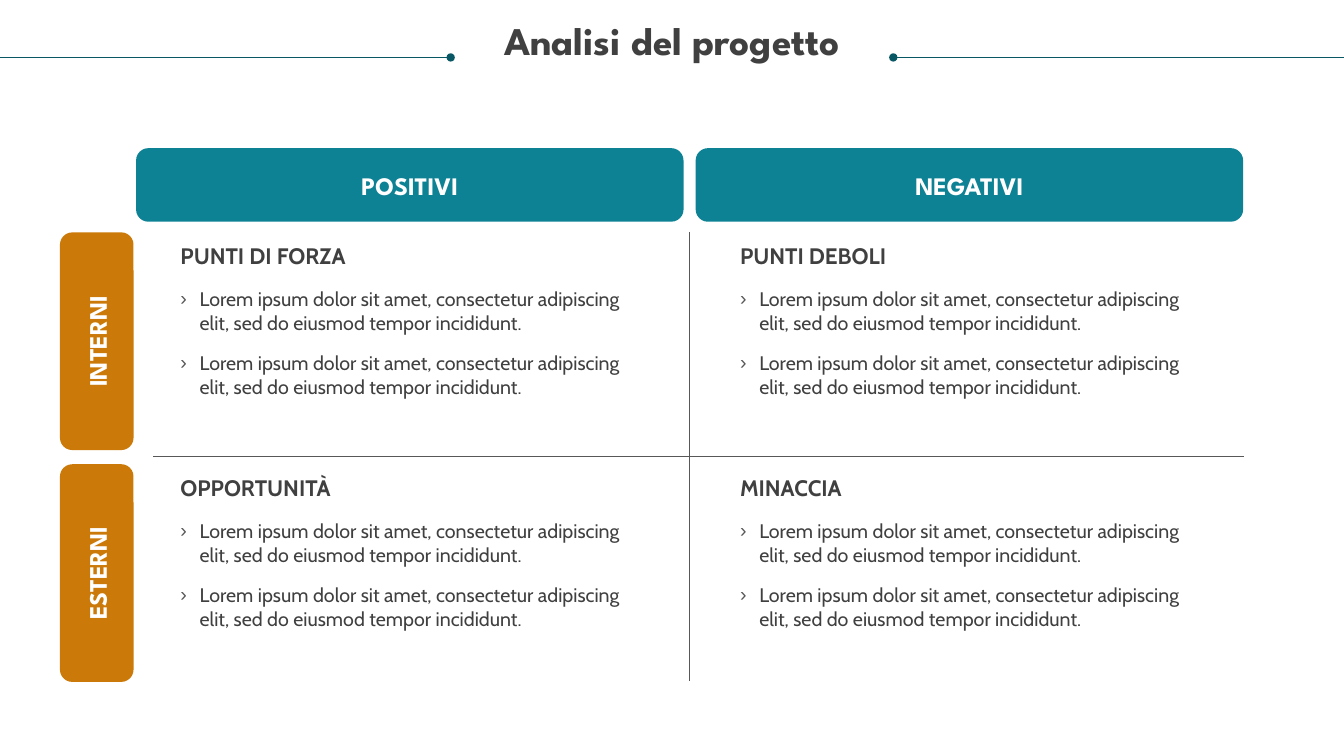
from dataclasses import dataclass

from lxml.etree import SubElement
from pptx import Presentation
from pptx.dml.color import RGBColor
from pptx.enum.shapes import MSO_CONNECTOR as Link, MSO_SHAPE as Kind
from pptx.enum.text import MSO_ANCHOR as Anchor, MSO_AUTO_SIZE as Fit, PP_ALIGN as Align
from pptx.oxml.ns import qn
from pptx.util import Emu, Pt

SCALE = 9144  # EMU in one px, 100 px to the inch
HEAD, BODY = "League Spartan", "Cabin"
WHITE, INK, GREY = "FFFFFF", "404040", "585858"
TEAL, DARK, AMBER = "0D8295", "085764", "CB7A09"
COL, ROW = 555, 230  # steps of the two-by-two grid
LOREM = "Lorem ipsum dolor sit amet, consectetur adipiscing elit, sed do eiusmod tempor incididunt."


@dataclass
class Box:
    x: int
    y: int
    w: int
    h: int


@dataclass
class Label:
    text: str
    box: Box
    fill: str
    turn: int = 0


@dataclass
class Rule:
    x1: int
    y1: int
    x2: int
    y2: int
    color: str = GREY
    dot: bool = False


@dataclass
class Cell:
    title: str
    col: int
    row: int


LABELS = [
    Label("POSITIVI", Box(135, 147, 543, 73), TEAL),
    Label("NEGATIVI", Box(135 + COL, 147, 543, 73), TEAL),
    Label("INTERNI", Box(-12, 302, 216, 73), AMBER, 270),
    Label("ESTERNI", Box(-12, 302 + ROW, 216, 73), AMBER, 270),
]
RULES = [
    Rule(447, 57, 0, 57, DARK, True),
    Rule(886, 57, 1333, 57, DARK, True),
    Rule(152, 453, 1234, 453),
    Rule(684, 230, 684, 676),
]
CELLS = [
    Cell("PUNTI DI FORZA", 0, 0),
    Cell("PUNTI DEBOLI", 1, 0),
    Cell("OPPORTUNITÀ", 0, 1),
    Cell("MINACCIA", 1, 1),
]


def px(n: int) -> Emu:
    return Emu(n * SCALE)


def rgb(color: str) -> RGBColor:
    return RGBColor.from_string(color)


def place(shape, box: Box) -> None:
    shape.left, shape.top = px(box.x), px(box.y)
    shape.width, shape.height = px(box.w), px(box.h)


def put(shape, *lines: str, size: int, font: str = BODY, color: str = INK,
        bold: bool = False, align=Align.LEFT, anchor=Anchor.TOP,
        inset: int = 0, lead: float = 1.0, gap: int = 0, mark: str = "") -> None:
    """Fill a shape with one paragraph per line, bulleted when mark is given."""
    frame = shape.text_frame
    frame.word_wrap, frame.auto_size = True, Fit.NONE
    frame.vertical_anchor = anchor
    frame.margin_left = frame.margin_right = px(inset)
    frame.margin_top = frame.margin_bottom = px(inset // 2)
    frame.text = "\n".join(lines)
    for para in frame.paragraphs:
        para.alignment, para.line_spacing, para.space_before = align, lead, Pt(gap)
        for run in para.runs:
            run.font.name, run.font.size, run.font.bold = font, Pt(size), bold
            run.font.color.rgb = rgb(color)
        if mark:
            bullet(para, mark)


def bullet(para, mark: str) -> None:
    props = para._p.get_or_add_pPr()
    props.set("marL", str(px(19)))
    props.set("indent", str(px(-19)))
    SubElement(SubElement(props, qn("a:buClr")), qn("a:srgbClr"), val=GREY)
    SubElement(props, qn("a:buChar"), char=mark)


def draw_rule(slide, rule: Rule) -> None:
    line = slide.shapes.add_connector(
        Link.STRAIGHT, px(rule.x1), px(rule.y1), px(rule.x2), px(rule.y2))
    line.line.width = Pt(0.5)
    line.line.color.rgb = rgb(rule.color)
    if rule.dot:
        SubElement(line.line._get_or_add_ln(), qn("a:headEnd"), type="oval")
    SubElement(line._element.spPr, qn("a:effectLst"))


def draw_label(slide, label: Label) -> None:
    box = label.box
    shape = slide.shapes.add_shape(
        Kind.ROUNDED_RECTANGLE, px(box.x), px(box.y), px(box.w), px(box.h))
    shape.shadow.inherit = False
    shape.fill.solid()
    shape.fill.fore_color.rgb = rgb(label.fill)
    shape.line.fill.background()
    shape.rotation = label.turn
    put(shape, label.text, size=18, font=HEAD, color=WHITE, bold=True,
        align=Align.CENTER, anchor=Anchor.MIDDLE, inset=10)


def draw_cell(slide, cell: Cell, holder) -> None:
    x, y = 179 + cell.col * COL, 240 + cell.row * ROW
    head = slide.shapes.add_textbox(px(x), px(y), px(455), px(27))
    put(head, cell.title, size=16, bold=True)
    place(holder, Box(x, y + 45, 455, 111))
    put(holder, LOREM, LOREM, size=14, gap=12, mark="›")


def main() -> None:
    deck = Presentation()
    deck.slide_width, deck.slide_height = px(1333), px(750)
    slide = deck.slides.add_slide(deck.slide_layouts.get_by_name("Comparison"))
    title, *bodies = slide.placeholders
    place(title, Box(25, 21, 1283, 73))
    put(title, "Analisi del progetto", size=28, font=HEAD, bold=True,
        align=Align.CENTER, lead=0.9)
    for rule in RULES:
        draw_rule(slide, rule)
    for label in LABELS:
        draw_label(slide, label)
    for cell, holder in zip(CELLS, bodies):
        draw_cell(slide, cell, holder)
    deck.save("out.pptx")


if __name__ == "__main__":
    main()
